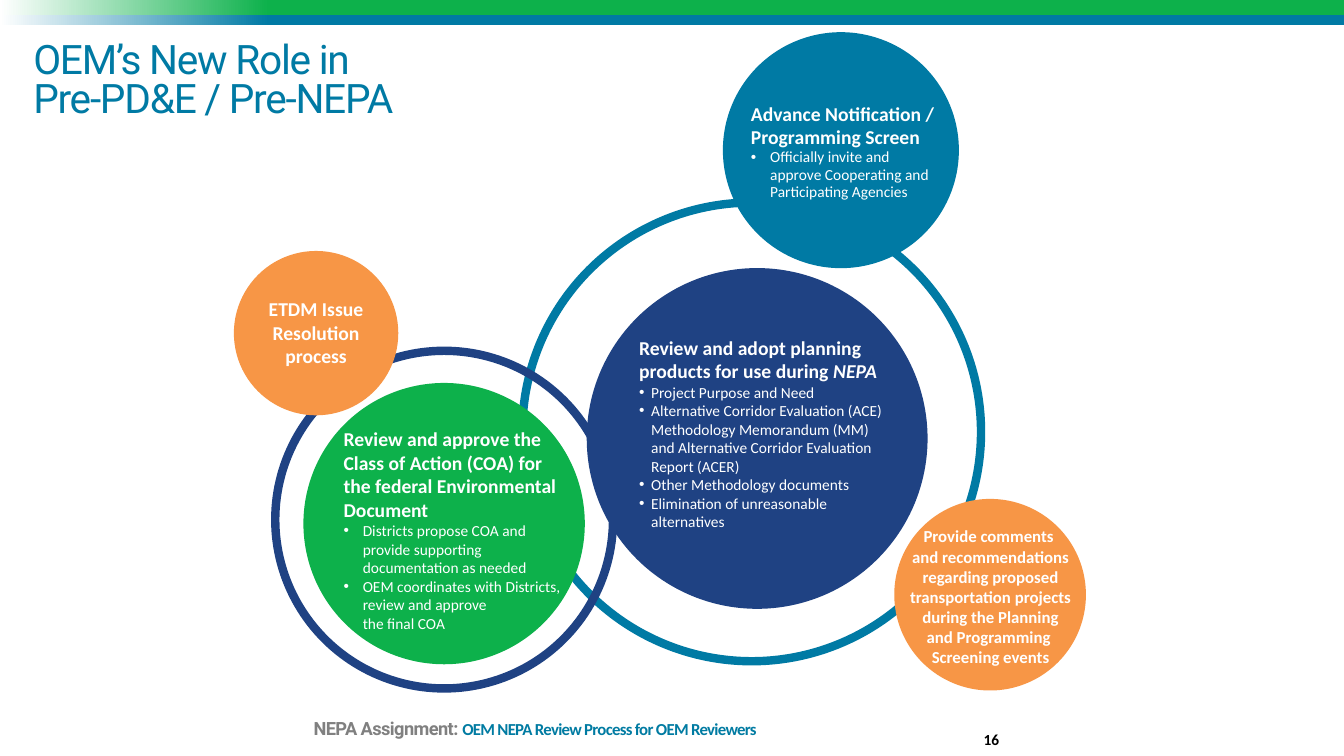
from copy import deepcopy

from lxml import etree
from pptx import Presentation
from pptx import util as u
from pptx.dml import color as dml
from pptx.enum import shapes, text
from pptx.oxml import ns

WHITE, GREEN, BLUE, NAVY, ORANGE = "FFFFFF", "0DB14B", "007AA4", "1F4283", "F79646"

CIRCLES = [
    (5.18, 2.01, 4.55, BLUE, False),
    (3.02, 3.81, 2.77, GREEN, True),
    (7.18, 0.33, 2.32, BLUE, True),
    (8.88, 4.96, 1.88, ORANGE, True),
    (2.73, 3.48, 3.35, NAVY, False),
    (2.33, 2.5, 1.61, ORANGE, True),
    (5.83, 2.67, 3.36, NAVY, True),
]


def rgb(value):
    return dml.RGBColor.from_string(value)


def add_band(slide, top, height, color):
    band = slide.shapes.add_shape(
        shapes.MSO_SHAPE.RECTANGLE, 0, u.Inches(top), u.Inches(13.33), u.Inches(height))
    band.shadow.inherit = False
    band.line.fill.background()
    band.fill.gradient()
    band.fill.gradient_angle = 0
    for stop, position, stop_color in zip(band.fill.gradient_stops, (0, 0.2), (WHITE, color)):
        stop.position = position
        stop.color.rgb = rgb(stop_color)


def add_circle(slide, left, top, size, color, filled):
    circle = slide.shapes.add_shape(
        shapes.MSO_SHAPE.OVAL, u.Inches(left), u.Inches(top), u.Inches(size), u.Inches(size))
    circle.shadow.inherit = False
    circle.line.color.rgb = rgb(color)
    circle.line.width = u.Pt(1.5 if filled else 6)
    if filled:
        circle.fill.solid()
        circle.fill.fore_color.rgb = rgb(color)
    else:
        circle.fill.background()


def format_run(run, size, color, bold=False, font="Calibri", spacing=0):
    run.font.size = u.Pt(size)
    run.font.name = font
    run.font.bold = bold
    run.font.color.rgb = rgb(color)
    if spacing:
        run.font._element.set("spc", str(round(spacing * 100)))


def format_breaks(paragraph):
    for line_break in paragraph._p.findall(ns.qn("a:br")):
        line_break.append(deepcopy(paragraph.runs[0].font._element))


def add_text_box(slide, left, top, width, height):
    box = slide.shapes.add_textbox(
        u.Inches(left), u.Inches(top), u.Inches(width), u.Inches(height))
    box.text_frame.word_wrap = True
    return box.text_frame


def anchor_bottom(frame):
    frame.vertical_anchor = text.MSO_ANCHOR.BOTTOM
    frame.margin_left = frame.margin_right = frame.margin_top = frame.margin_bottom = 0


def add_heading(frame, heading, size=14, align=text.PP_ALIGN.LEFT):
    paragraph = frame.paragraphs[0]
    paragraph.text = heading
    paragraph.alignment = align
    for run in paragraph.runs:
        format_run(run, size, WHITE, bold=True)
    format_breaks(paragraph)
    return paragraph


def add_bullets(frame, items, indent, line_spacing=1.0):
    for item in items:
        paragraph = frame.add_paragraph()
        paragraph.text = item
        properties = paragraph._p.get_or_add_pPr()
        properties.set("marL", str(u.Inches(indent)))
        properties.set("indent", str(-u.Inches(indent)))
        etree.SubElement(properties, ns.qn("a:buFont")).set("typeface", "Arial")
        etree.SubElement(properties, ns.qn("a:buChar")).set("char", "•")
        paragraph.line_spacing = line_spacing
        for run in paragraph.runs:
            format_run(run, 11, WHITE)
        format_breaks(paragraph)


def set_title(slide):
    title = slide.shapes.title
    title.left, title.top = u.Inches(0.33), u.Inches(0.3)
    title.width, title.height = u.Inches(12), u.Inches(0.9)
    frame = title.text_frame
    frame.auto_size = text.MSO_AUTO_SIZE.NONE
    anchor_bottom(frame)
    paragraph = frame.paragraphs[0]
    paragraph.text = "OEM’s New Role in \nPre-PD&E / Pre-NEPA"
    paragraph.alignment = text.PP_ALIGN.LEFT
    paragraph.line_spacing = 0.8
    for run in paragraph.runs:
        format_run(run, 29, BLUE, font="Roboto", spacing=-0.9)
    format_breaks(paragraph)


def add_footer(slide):
    frame = add_text_box(slide, 3.11, 6.86, 7.21, 0.47)
    anchor_bottom(frame)
    paragraph = frame.paragraphs[0]
    paragraph.text = "NEPA Assignment: "
    paragraph.line_spacing = 0.8
    paragraph.space_after = u.Pt(12)
    format_run(paragraph.runs[0], 13, "808080", True, "Roboto", -0.4)
    course = paragraph.add_run()
    course.text = "OEM NEPA Review Process for OEM Reviewers"
    format_run(course, 12, "007BA2", True, spacing=-0.5)


def add_slide_number(slide):
    frame = add_text_box(slide, 9.33, 7.03, 0.58, 0.4)
    anchor_bottom(frame)
    paragraph = frame.paragraphs[0]
    paragraph.text = "16"
    paragraph.alignment = text.PP_ALIGN.RIGHT
    format_run(paragraph.runs[0], 11, "000000", True)


def add_circle_texts(slide):
    planning = add_text_box(slide, 6.24, 3.28, 2.63, 2.05)
    heading = add_heading(planning, "Review and adopt planning \nproducts for use during ")
    nepa = heading.add_run()
    nepa.text = "NEPA"
    format_run(nepa, 14, WHITE, bold=True)
    nepa.font.italic = True
    add_bullets(planning, [
        "Project Purpose and Need",
        "Alternative Corridor Evaluation (ACE) Methodology Memorandum (MM) "
        "and Alternative Corridor Evaluation Report (ACER)",
        "Other Methodology documents",
        "Elimination of unreasonable alternatives",
    ], 0.12)

    notification = add_text_box(slide, 7.35, 0.96, 2.07, 1.1)
    add_heading(notification, "Advance Notification / Programming Screen")
    add_bullets(notification, [
        "Officially invite and approve Cooperating and\nParticipating Agencies",
    ], 0.19, 0.95)

    comments = add_text_box(slide, 8.91, 5.17, 1.83, 1.51)
    add_heading(
        comments,
        "Provide comments \nand recommendations regarding proposed transportation projects "
        "during the Planning and Programming \nScreening events",
        12, text.PP_ALIGN.CENTER)

    resolution = add_text_box(slide, 2.43, 2.9, 1.41, 0.81)
    add_heading(resolution, "ETDM Issue Resolution process", align=text.PP_ALIGN.CENTER)

    approval = add_text_box(slide, 3.31, 4.19, 2.5, 2.15)
    add_heading(
        approval,
        "Review and approve the Class of Action (COA) for \n"
        "the federal Environmental Document")
    add_bullets(approval, [
        "Districts propose COA and provide supporting documentation as needed",
        "OEM coordinates with Districts, review and approve\nthe final COA",
    ], 0.19)


def main():
    presentation = Presentation()
    presentation.slide_width, presentation.slide_height = u.Inches(13.33), u.Inches(7.5)
    slide = presentation.slides.add_slide(presentation.slide_layouts.get_by_name("Title Only"))
    add_band(slide, 0, 0.15, GREEN)
    add_band(slide, 0.15, 0.1, BLUE)
    add_footer(slide)
    set_title(slide)
    add_slide_number(slide)
    for circle in CIRCLES:
        add_circle(slide, *circle)
    add_circle_texts(slide)
    presentation.save("out.pptx")


if __name__ == "__main__":
    main()
